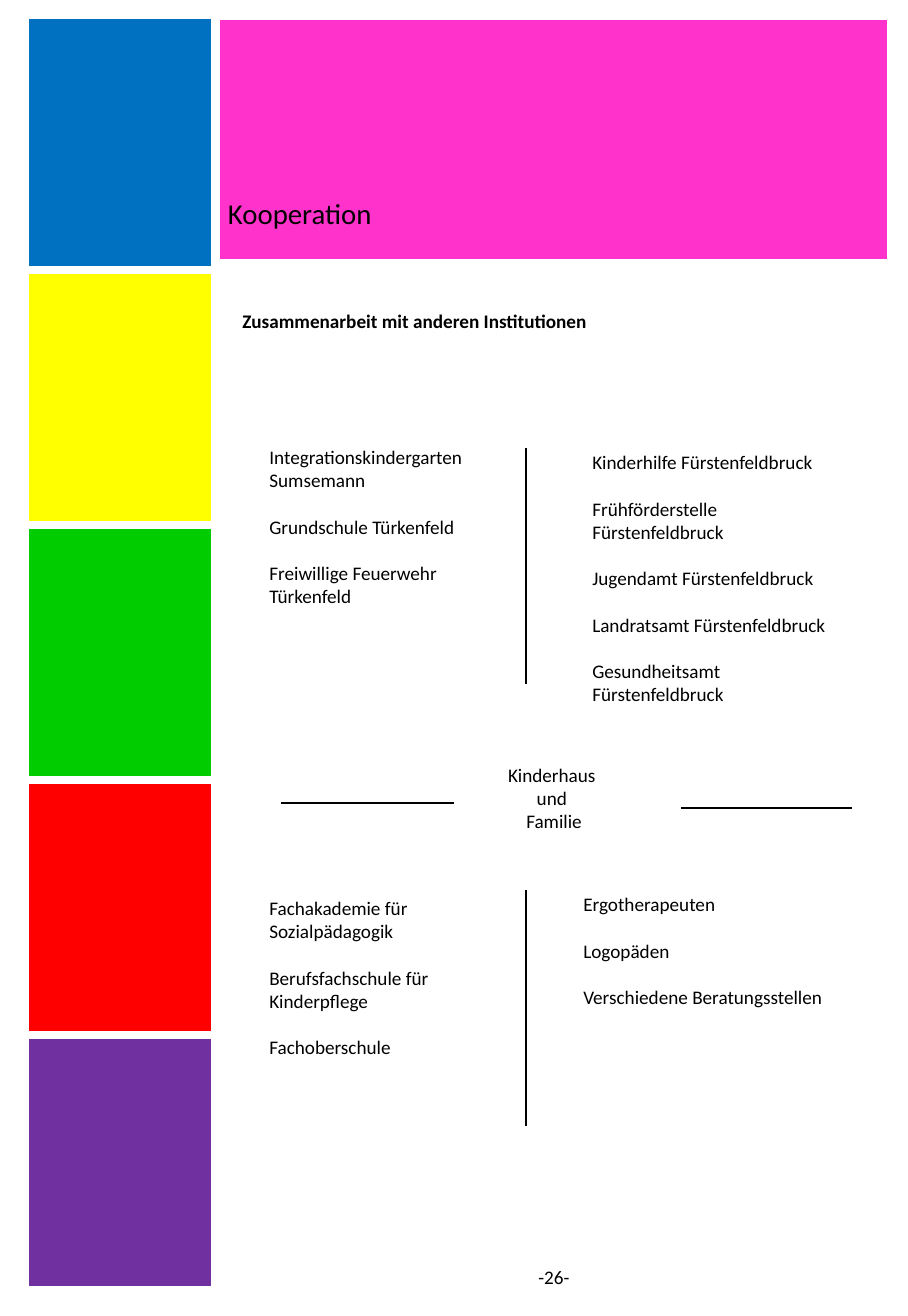
from lxml import etree
from pptx import Presentation
from pptx.dml.color import RGBColor
from pptx.enum.shapes import MSO_CONNECTOR as CONN, MSO_SHAPE as SHAPE
from pptx.enum.text import MSO_ANCHOR as ANCHOR, PP_ALIGN as ALIGN
from pptx.oxml import parse_xml
from pptx.oxml.ns import nsdecls, qn
from pptx.util import Emu, Pt

COLORS = {
    "blue": "0070C0", "yellow": "FFFF00", "green": "00CC00", "red": "FF0000",
    "purple": "7030A0", "pink": "FF33CC", "white": "FFFFFF", "black": "000000",
}
FONT = "Calibri"
BORDER = Pt(6)
ENTRY_GAP = 14.6

TITLE = "Kooperation"
BANDS = ["blue", "yellow", "green", "red", "purple"]
BAND_BOX = (25, 15, 190, 1275)
PANELS = [("pink", (215, 15, 677, 249), TITLE), ("white", (220, 264, 677, 1025), "")]

PARTNERS = [
    ((258, 440, 267, 244), ["Integrationskindergarten Sumsemann", "Grundschule Türkenfeld",
                            "Freiwillige Feuerwehr Türkenfeld"]),
    ((581, 445, 281, 267), ["Kinderhilfe Fürstenfeldbruck", "Frühförderstelle Fürstenfeldbruck",
                            "Jugendamt Fürstenfeldbruck", "Landratsamt Fürstenfeldbruck",
                            "Gesundheitsamt Fürstenfeldbruck"]),
    ((258, 891, 209, 174), ["Fachakademie für Sozialpädagogik",
                            "Berufsfachschule für Kinderpflege", "Fachoberschule"]),
    ((572, 887, 281, 198), ["Ergotherapeuten", "Logopäden", "Verschiedene Beratungsstellen"]),
]
HEADING = ((231, 304, 649, 35), ["Zusammenarbeit mit anderen Institutionen"])
CENTRE = ((486, 758, 136, 82), ["Kinderhaus ", "und ", "Familie"])
PAGE_NUMBER = ((228, 1260, 652, 35), ["-26-"])
DIVIDERS = [(526, 448, 526, 684), (526, 890, 526, 1126),
            (681, 808, 852, 808), (281, 803, 454, 803)]


def px(n):
    return Emu(round(n * 914400 / 115.2))


def color(name):
    return RGBColor.from_string(COLORS[name])


def write(tf, lines, size=12, bold=False, align=ALIGN.LEFT, gap=0):
    tf.word_wrap = True
    for i, line in enumerate(lines):
        p = tf.paragraphs[0] if i == 0 else tf.add_paragraph()
        p.alignment = align
        if i:
            p.space_before = Pt(gap)
        r = p.add_run()
        r.text = line
        r.font.name, r.font.size, r.font.bold = FONT, Pt(size), bold
        r.font.color.rgb = color("black")


def add_text(slide, block, **style):
    box, lines = block
    write(slide.shapes.add_textbox(*map(px, box)).text_frame, lines, **style)


def add_panel(slide, fill, box, text):
    sp = slide.shapes.add_shape(SHAPE.RECTANGLE, *map(px, box))
    sp.shadow.inherit = False
    sp.fill.solid()
    sp.fill.fore_color.rgb = color(fill)
    sp.line.color.rgb = color("white")
    sp.line.width = BORDER
    if text:
        tf = sp.text_frame
        tf.vertical_anchor = ANCHOR.TOP
        tf.margin_left, tf.margin_top = px(13), px(181)
        write(tf, [text], size=18)


def add_bands(slide):
    table = slide.shapes.add_table(len(BANDS), 1, *map(px, BAND_BOX)).table
    table.first_row = table.horz_banding = False
    for i, name in enumerate(BANDS):
        cell = table.cell(i, 0)
        tc_pr = cell._tc.get_or_add_tcPr()
        for side in "LRTB":
            tc_pr.append(parse_xml(
                f'<a:ln{side} {nsdecls("a")} w="{BORDER}"><a:solidFill>'
                f'<a:srgbClr val="{COLORS["white"]}"/></a:solidFill></a:ln{side}>'))
        cell.fill.solid()
        cell.fill.fore_color.rgb = color(name)


def add_divider(slide, ends):
    line = slide.shapes.add_connector(CONN.STRAIGHT, *map(px, ends))
    line.line.color.rgb = color("black")
    line.line.width = Pt(0.75)
    etree.SubElement(line._element.spPr, qn("a:effectLst"))


def main():
    prs = Presentation()
    prs.slide_width, prs.slide_height = px(908), px(1316)
    slide = prs.slides.add_slide(prs.slide_layouts[6])
    for panel in PANELS:
        add_panel(slide, *panel)
    add_bands(slide)
    add_text(slide, HEADING, bold=True)
    for ends in DIVIDERS:
        add_divider(slide, ends)
    for block in PARTNERS:
        add_text(slide, block, gap=ENTRY_GAP)
    for block in (CENTRE, PAGE_NUMBER):
        add_text(slide, block, align=ALIGN.CENTER)
    prs.save("out.pptx")


if __name__ == "__main__":
    main()
